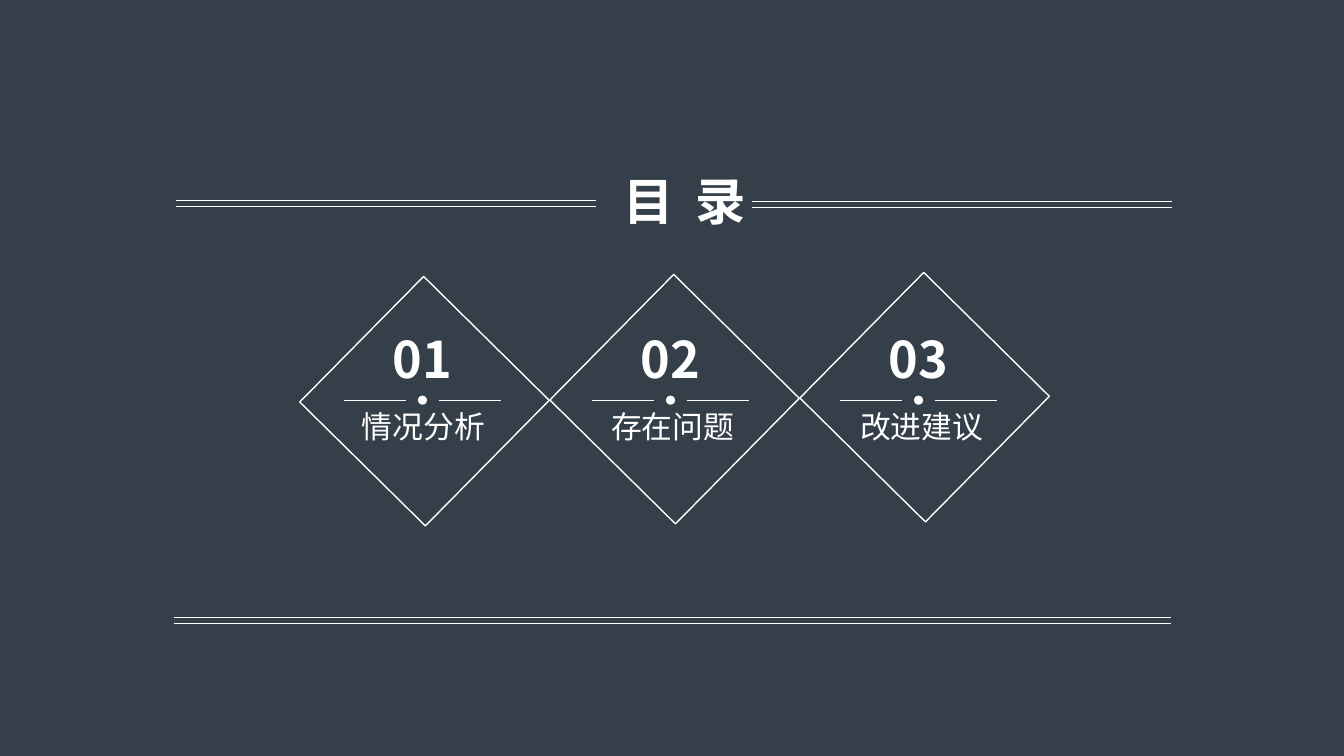
import pptx
import pptx.util
import pptx.dml.color
import pptx.enum.shapes
import pptx.enum.text
import lxml.etree

TITLE = "目录"
ITEMS = [("01", "情况分析"), ("02", "存在问题"), ("03", "改进建议")]
COLOURS = {"background": "343F4A", "ink": "FFFFFF"}
FONT = "Noto Sans CJK SC"

# Lengths in inches; each row of items has a first centre and a pitch
WIDTH, HEIGHT = 13.33, 7.5
DIAMOND = {"first": 4.21, "pitch": 2.48, "middle": 3.98, "rise": 0.02, "side": 1.75, "turn": 44.6}
NUMBER = {"first": 4.19, "pitch": 2.46, "top": 3.21, "width": 0.82, "height": 0.71}
LABEL = {"first": 4.2, "pitch": 2.47, "top": 4.0, "width": 1.79, "height": 0.47}
DIVIDER = {"middle": 3.97, "inner": 0.16, "outer": 0.78, "dot": 0.09}
RULES = [(1.75, 5.91, 1.99), (7.46, 11.62, 2.0), (1.73, 11.61, 6.12)]
RULE_GAP = 0.06

inch = pptx.util.Inches
SHAPES = pptx.enum.shapes.MSO_SHAPE


def colour(name):
    return pptx.dml.color.RGBColor.from_string(COLOURS[name])


def add_line(page, left, right, y):
    line = page.shapes.add_connector(
        pptx.enum.shapes.MSO_CONNECTOR.STRAIGHT, inch(left), inch(y), inch(right), inch(y))
    line.line.color.rgb = colour("ink")
    line.line.width = pptx.util.Pt(0.5)
    lxml.etree.SubElement(line._element.spPr, pptx.oxml.ns.qn("a:effectLst"))


def add_centred(page, kind, x, y, side):
    shape = page.shapes.add_shape(
        kind, inch(x - side / 2), inch(y - side / 2), inch(side), inch(side))
    shape.shadow.inherit = False
    return shape


def add_text(page, text, x, top, width, height, size, bold=False, spacing=0):
    box = page.shapes.add_textbox(inch(x - width / 2), inch(top), inch(width), inch(height))
    box.text_frame.word_wrap = True
    para = box.text_frame.paragraphs[0]
    para.text = text
    para.alignment = pptx.enum.text.PP_ALIGN.CENTER
    para.font.name = FONT
    para.font.size = pptx.util.Pt(size)
    para.font.bold = bold
    para.font.color.rgb = colour("ink")
    # East Asian typeface and letter spacing
    properties = para.font._element
    east_asian = lxml.etree.SubElement(properties, pptx.oxml.ns.qn("a:ea"))
    east_asian.set("typeface", FONT)
    if spacing:
        properties.set("spc", str(spacing * 100))


def add_item(page, index, number, label):
    # Outlined diamond, each a little higher than the one before
    diamond = add_centred(page, SHAPES.RECTANGLE,
                          DIAMOND["first"] + index * DIAMOND["pitch"],
                          DIAMOND["middle"] - index * DIAMOND["rise"], DIAMOND["side"])
    diamond.rotation = DIAMOND["turn"]
    diamond.fill.background()
    diamond.line.color.rgb = colour("ink")
    diamond.line.width = pptx.util.Pt(1)

    # Divider: a dot between two short lines
    x, y = NUMBER["first"] + index * NUMBER["pitch"], DIVIDER["middle"]
    add_line(page, x - DIVIDER["outer"], x - DIVIDER["inner"], y)
    add_line(page, x + DIVIDER["inner"], x + DIVIDER["outer"], y)
    dot = add_centred(page, SHAPES.OVAL, x, y, DIVIDER["dot"])
    dot.fill.solid()
    dot.fill.fore_color.rgb = colour("ink")
    dot.line.fill.background()

    # Number above, label below
    add_text(page, number, x, NUMBER["top"], NUMBER["width"], NUMBER["height"], 36, bold=True)
    add_text(page, label, LABEL["first"] + index * LABEL["pitch"],
             LABEL["top"], LABEL["width"], LABEL["height"], 22)


def main():
    deck = pptx.Presentation()
    deck.slide_width, deck.slide_height = inch(WIDTH), inch(HEIGHT)
    page = deck.slides.add_slide(deck.slide_layouts[6])
    page.background.fill.solid()
    page.background.fill.fore_color.rgb = colour("background")

    # Double rules beside the title and at the foot
    for left, right, y in RULES:
        add_line(page, left, right, y)
        add_line(page, left, right, y + RULE_GAP)

    add_text(page, TITLE, 6.79, 1.64, 1.83, 0.71, 36, bold=True, spacing=15)
    for index, (number, label) in enumerate(ITEMS):
        add_item(page, index, number, label)
    deck.save("out.pptx")


if __name__ == "__main__":
    main()
